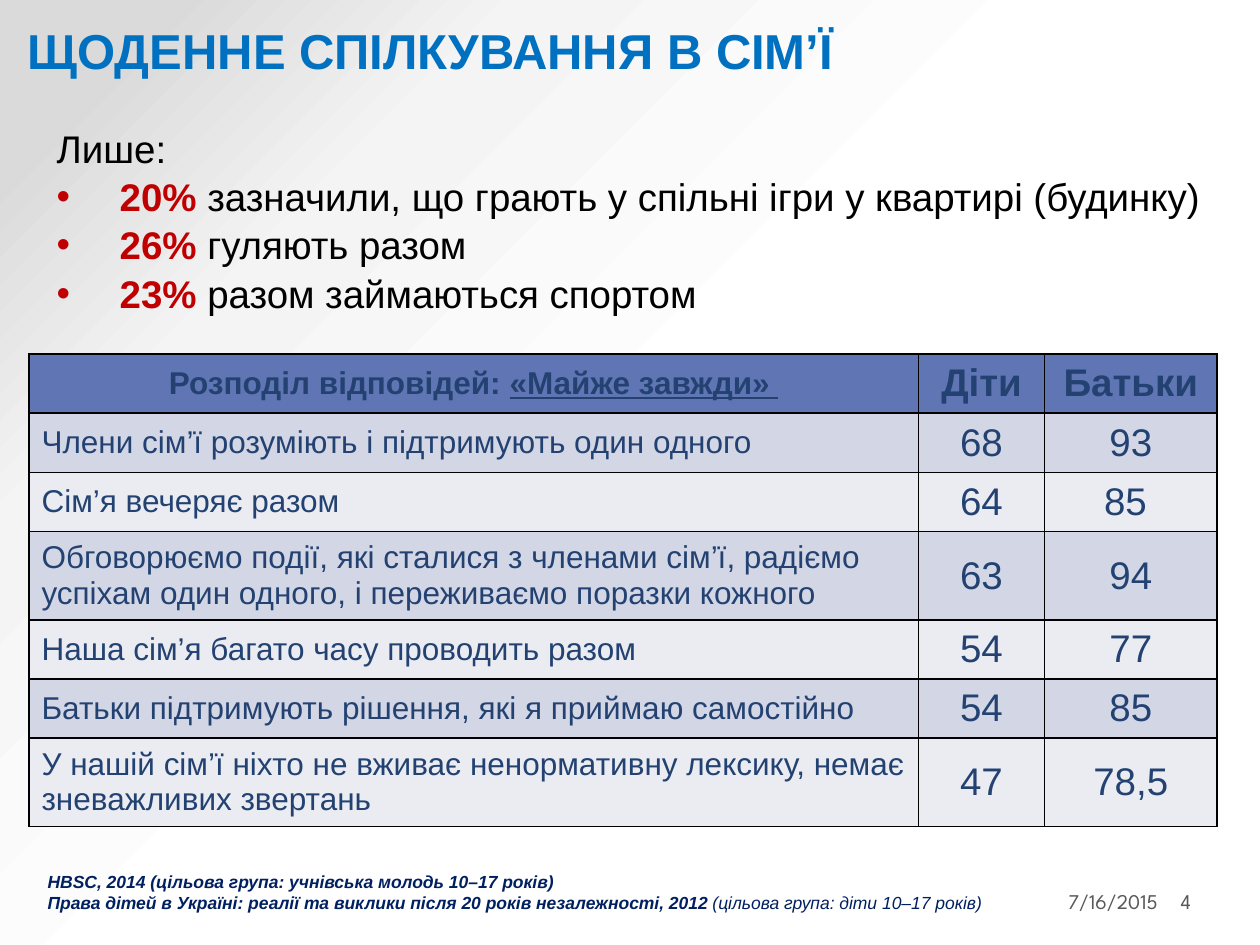
from lxml.etree import SubElement
from pptx import Presentation
from pptx.dml.color import RGBColor
from pptx.enum.text import MSO_ANCHOR, MSO_AUTO_SIZE, PP_ALIGN
from pptx.oxml import parse_xml
from pptx.oxml.ns import nsdecls, qn
from pptx.util import Inches, Pt

THEME = {
    "font": "Arial", "footer_font": "League Spartan",
    "title": "0070C0", "text": "000000", "accent": "C00000",
    "table_text": "234271", "header": "6076B4", "bands": ("D2D6E5", "EAECF2"),
    "border": "000000", "source": "002060", "footer": "595959",
    "background": ((0, "FFFFFF"), (50, "FFFFFF"), (76, "F4F4F4"), (92, "DADADA"), (100, "DADADA")),
    "title_size": 28, "large": 22, "medium": 18, "footer_size": 12, "small": 10,
}


def add_run(paragraph, text, size, color, font=THEME["font"], **formats):
    run = paragraph.add_run()
    run.text = text
    run.font.color.rgb = RGBColor.from_string(color)
    values = {"name": font, "size": Pt(size), "bold": False, "italic": False, **formats}
    for name, value in values.items():
        setattr(run.font, name, value)


def format_frame(shape, box, **formats):
    for name, value in zip(("left", "top", "width", "height"), box):
        setattr(shape, name, Inches(value))
    values = {"word_wrap": True, "auto_size": MSO_AUTO_SIZE.NONE, "vertical_anchor": MSO_ANCHOR.TOP, **formats}
    for name, value in values.items():
        setattr(shape.text_frame, name, value)
    return shape.text_frame


presentation = Presentation()
presentation.slide_width = Inches(10)
presentation.slide_height = Inches(7.5)
slide = presentation.slides.add_slide(presentation.slide_layouts[1])

slide.background.fill.gradient()
gradient = slide.background._cSld.find(".//" + qn("a:gradFill"))
stops = "".join(
    f'<a:gs pos="{position * 1000}"><a:srgbClr val="{color}"/></a:gs>'
    for position, color in THEME["background"]
)
gradient.getparent().replace(gradient, parse_xml(
    f'<a:gradFill {nsdecls("a")} rotWithShape="1"><a:gsLst>{stops}</a:gsLst>'
    '<a:path path="circle"><a:fillToRect l="100000" t="100000"/></a:path></a:gradFill>'
))

title = format_frame(slide.shapes.title, (0.12, 0.29, 9.88, 0.39), vertical_anchor=MSO_ANCHOR.BOTTOM)
title.paragraphs[0].alignment = PP_ALIGN.LEFT
add_run(title.paragraphs[0], "ЩОДЕННЕ СПІЛКУВАННЯ В СІМ’Ї", THEME["title_size"], THEME["title"], bold=True)

FINDINGS = [
    ("", "Лише:"),
    ("20%", " зазначили, що грають у спільні ігри у квартирі (будинку)"),
    ("26%", " гуляють разом"),
    ("23%", " разом займаються спортом"),
]
findings = format_frame(slide.placeholders[1], (0.35, 0.92, 9.37, 1.58))
for index, (share, text) in enumerate(FINDINGS):
    paragraph = findings.paragraphs[0] if index == 0 else findings.add_paragraph()
    paragraph.space_before = Pt(0)
    paragraph.line_spacing = 1.05
    properties = paragraph._p.get_or_add_pPr()
    indent = Inches(0.5) if share else 0
    properties.set("marL", str(indent))
    properties.set("indent", str(-indent))
    if share:
        SubElement(properties, qn("a:buFont")).set("typeface", THEME["font"])
        SubElement(properties, qn("a:buChar")).set("char", "•")
        add_run(paragraph, share, THEME["large"], THEME["accent"], bold=True)
    else:
        SubElement(properties, qn("a:buNone"))
    add_run(paragraph, text, THEME["large"], THEME["text"])

ANSWERS = [
    ("Розподіл відповідей: ", "Діти", "Батьки"),
    ("Члени сім’ї розуміють і підтримують один одного", "68", "93"),
    ("Сім’я вечеряє разом", "64", "85 "),
    ("Обговорюємо події, які сталися з членами сім’ї, радіємо успіхам один одного, "
     "і переживаємо поразки кожного", "63", "94"),
    ("Наша сім’я багато часу проводить разом", "54", "77"),
    ("Батьки підтримують рішення, які я приймаю самостійно", "54", "85"),
    ("У нашій сім’ї ніхто не вживає ненормативну лексику, немає зневажливих звертань", "47", "78,5"),
]
table = slide.shapes.add_table(
    len(ANSWERS), 3, Inches(0.23), Inches(2.81), Inches(9.43), Inches(3.73)
).table
for column, width in zip(table.columns, (7.06, 1, 1.37)):
    column.width = Inches(width)
for row_index, answers in enumerate(ANSWERS):
    is_header = row_index == 0
    table.rows[row_index].height = Inches(0.7 if len(answers[0]) > 60 else 0.47)
    fill = THEME["header"] if is_header else THEME["bands"][(row_index - 1) % 2]
    for column_index, text in enumerate(answers):
        cell = table.cell(row_index, column_index)
        cell.vertical_anchor = MSO_ANCHOR.MIDDLE
        paragraph = cell.text_frame.paragraphs[0]
        paragraph.alignment = PP_ALIGN.CENTER if is_header or column_index else PP_ALIGN.LEFT
        size = THEME["large"] if column_index else THEME["medium"]
        add_run(paragraph, text, size, THEME["table_text"], bold=is_header)
        if is_header and column_index == 0:
            add_run(paragraph, "«Майже завжди» ", size, THEME["table_text"], bold=True, underline=True)
        cell_properties = cell._tc.get_or_add_tcPr()
        for side in ("lnL", "lnR", "lnT", "lnB"):
            line = SubElement(cell_properties, qn(f"a:{side}"), w=str(Pt(1)))
            line_fill = SubElement(line, qn("a:solidFill"))
            SubElement(line_fill, qn("a:srgbClr"), val=THEME["border"])
        cell.fill.solid()
        cell.fill.fore_color.rgb = RGBColor.from_string(fill)

SOURCES = [
    [("HBSC, 2014 (цільова група: учнівська молодь 10–17 років)", True)],
    [("Права дітей в Україні: реалії та виклики після 20 років незалежності, 2012 ", True),
     ("(цільова група: діти 10–17 років)", False)],
]
sources = format_frame(slide.shapes.add_textbox(0, 0, 0, 0), (0.28, 6.86, 9.53, 0.44))
for index, parts in enumerate(SOURCES):
    paragraph = sources.paragraphs[0] if index == 0 else sources.add_paragraph()
    for text, bold in parts:
        add_run(paragraph, text, THEME["small"], THEME["source"], bold=bold, italic=True)

FOOTERS = [
    ("7/16/2015", (6.96, 6.95, 2.28, 0.4), 0.1, PP_ALIGN.RIGHT),
    ("4", (9.34, 6.95, 0.61, 0.4), 0.03, PP_ALIGN.LEFT),
]
for text, box, left_margin, alignment in FOOTERS:
    footer = format_frame(
        slide.shapes.add_textbox(0, 0, 0, 0), box, vertical_anchor=MSO_ANCHOR.MIDDLE,
        margin_left=Inches(left_margin), margin_right=Inches(0.05),
    )
    footer.paragraphs[0].alignment = alignment
    add_run(footer.paragraphs[0], text, THEME["footer_size"], THEME["footer"], THEME["footer_font"])

presentation.save("out.pptx")
